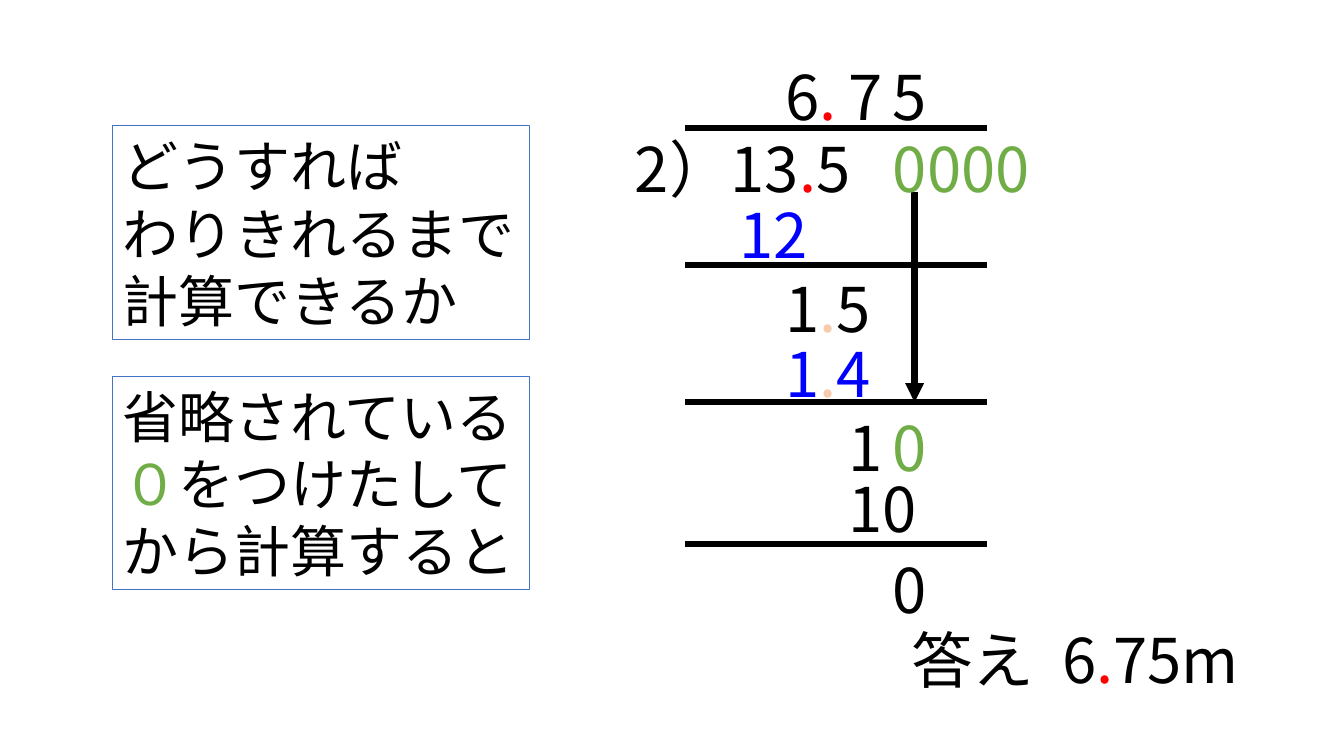
from lxml.etree import SubElement
from pptx import Presentation
from pptx.dml.color import RGBColor
from pptx.enum.shapes import MSO_CONNECTOR, MSO_SHAPE
from pptx.enum.text import MSO_ANCHOR, PP_ALIGN
from pptx.oxml.ns import qn
from pptx.util import Inches, Pt

BLACK = RGBColor(0x00, 0x00, 0x00)
RED = RGBColor(0xFF, 0x00, 0x00)
BLUE = RGBColor(0x00, 0x00, 0xFF)
GREEN = RGBColor(0x70, 0xAD, 0x47)
PEACH = RGBColor(0xF8, 0xCB, 0xAD)
FRAME = RGBColor(0x44, 0x72, 0xC4)


class Board:
    """Draws on one slide, with lengths in hundredths of its width and height."""

    font = "Noto Sans CJK JP"
    digit = 44
    prose = 40
    lead = 1.2

    def __init__(self, deck):
        self.deck = deck
        self.slide = deck.slides.add_slide(deck.slide_layouts[6])

    def across(self, col):
        return round(self.deck.slide_width * col / 100)

    def down(self, row):
        return round(self.deck.slide_height * row / 100)

    def area(self, col, row, wide, high):
        return self.across(col), self.down(row), self.across(wide), self.down(high)

    def letter(self, frame, lines, size):
        frame.word_wrap = True
        for i, runs in enumerate(lines):
            para = frame.add_paragraph() if i else frame.paragraphs[0]
            para.alignment = PP_ALIGN.LEFT
            para.line_spacing = Pt(size * self.lead)
            for text, color in runs:
                run = para.add_run()
                run.text = text
                run.font.size = Pt(size)
                run.font.name = self.font
                run.font.color.rgb = color
                props = run.font._element
                SubElement(props, qn("a:ea"), typeface=self.font)
                if text == " ":
                    props.set("spc", "1000")

    def label(self, col, row, wide, *runs):
        box = self.slide.shapes.add_textbox(*self.area(col, row, wide, 11.2))
        self.letter(box.text_frame, [runs], self.digit)

    def panel(self, row, lines):
        box = self.slide.shapes.add_shape(
            MSO_SHAPE.RECTANGLE, *self.area(8.4, row, 31, 28.25))
        box.shadow.inherit = False
        box.fill.background()
        box.line.color.rgb = FRAME
        box.line.width = Pt(0.75)
        box.text_frame.vertical_anchor = MSO_ANCHOR.MIDDLE
        self.letter(box.text_frame, lines, self.prose)

    def rule(self, left, top, right, low, arrow=False):
        line = self.slide.shapes.add_connector(
            MSO_CONNECTOR.STRAIGHT, self.across(left), self.down(top),
            self.across(right), self.down(low))
        line.line.color.rgb = BLACK
        line.line.width = Pt(4.5)
        props = line._element.spPr
        if arrow:
            SubElement(props.find(qn("a:ln")), qn("a:tailEnd"), type="triangle")
        SubElement(props, qn("a:effectLst"))


def main():
    deck = Presentation()
    deck.slide_width, deck.slide_height = Inches(13.33), Inches(7.5)
    board = Board(deck)
    ones, tenths, cents = 57.7, 62.4, 65.7
    point, faint = (".", RED), (".", PEACH)

    board.panel(16.65, [
        [("どうすれば", BLACK)],
        [("わりきれるまで", BLACK)],
        [("計算できるか", BLACK)]])
    board.panel(49.75, [
        [("省略されている", BLACK)],
        [("０", GREEN), ("をつけたして", BLACK)],
        [("から計算すると", BLACK)]])

    for row in (16.95, 35.05, 53.2, 72):
        board.rule(51, row, 73.45, row)
    board.rule(68.05, 25.35, 68.05, 53.2, arrow=True)

    for col, row, wide, *runs in (
        (ones, 7.2, 6.5, ("6", BLACK), point),
        (tenths, 7.2, 4.8, ("7", BLACK)),
        (cents, 7.2, 4.8, ("5", BLACK)),
        (46.5, 16.65, 20.95, ("2）13", BLACK), point, ("5", BLACK)),
        (cents, 16.65, 14.6, ("0000", GREEN)),
        (54.3, 25.35, 8, ("12", BLUE)),
        (ones, 35.2, 9.75, ("1", BLACK), faint, ("5", BLACK)),
        (ones, 43.75, 9.75, ("1", BLUE), faint, ("4", BLUE)),
        (tenths, 53.6, 5.1, ("1", BLACK)),
        (cents, 53.6, 4.8, ("0", GREEN)),
        (tenths, 61.6, 9.4, ("10", BLACK)),
        (cents, 72.4, 4.8, ("0", BLACK)),
        (67.05, 81.6, 28.4, ("答え", BLACK), (" ", BLACK), ("6", BLACK),
         point, ("75m", BLACK)),
    ):
        board.label(col, row, wide, *runs)

    deck.save("out.pptx")


if __name__ == "__main__":
    main()
